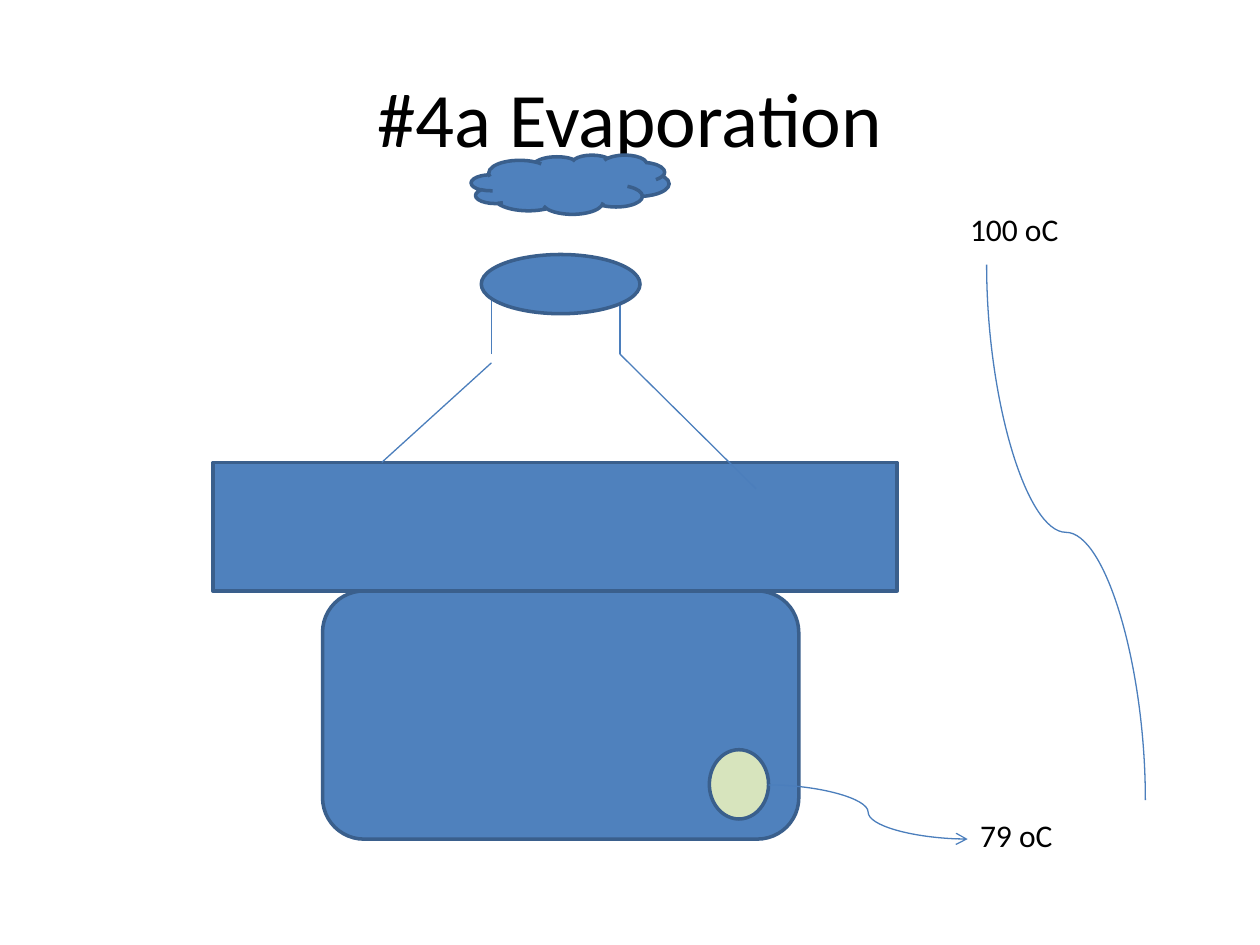
from lxml import etree
from pptx import Presentation
from pptx.dml.color import RGBColor
from pptx.enum.shapes import MSO_CONNECTOR, MSO_SHAPE
from pptx.enum.text import MSO_ANCHOR, MSO_AUTO_SIZE, PP_ALIGN
from pptx.oxml.ns import qn
from pptx.util import Inches, Pt

STRAIGHT, CURVE = MSO_CONNECTOR.STRAIGHT, MSO_CONNECTOR.CURVE
OVAL = MSO_SHAPE.OVAL
COLORS = {"body": "4F81BD", "edge": "3A5F8C", "line": "4B7EBC",
          "bulb": "D7E4BD", "text": "000000"}
FONT = "Calibri"
WIDTH, HEIGHT = 10, 7.5

TITLE = "#4a Evaporation"
BURNER = [
    (MSO_SHAPE.ROUNDED_RECTANGLE, (2.56, 4.69, 3.78, 1.97), "body"),
    (MSO_SHAPE.RECTANGLE, (1.69, 3.67, 5.43, 1.02), "body"),
]
NECK_LEFT, NECK_RIGHT, NECK_TOP, NECK_BOTTOM = 3.9, 4.92, 2.33, 2.81
FLASK_WALLS = [
    ((3.03, 3.67), (NECK_LEFT, 2.88)),
    ((NECK_LEFT, NECK_BOTTOM), (NECK_LEFT, NECK_TOP)),
    ((NECK_RIGHT, NECK_BOTTOM), (6, 3.88)),
    ((NECK_RIGHT, NECK_BOTTOM), (NECK_RIGHT, NECK_TOP)),
]
VAPOUR_AND_BULB = [
    (OVAL, (3.82, 2.02, 1.26, 0.47), "body"),
    (MSO_SHAPE.CLOUD, (3.74, 1.23, 1.57, 0.47), "body"),
    (OVAL, (5.63, 5.95, 0.47, 0.55), "bulb"),
]
BULB_POINTER = ((6.1, 6.23), (7.68, 6.66))
SCALE_CURVE = ((9.09, 6.35), (7.83, 2.1))
READINGS = [("79 oC", (7.68, 6.43, 1.73, 0.4)),
            ("100 oC", (7.6, 1.62, 1.18, 0.4))]


def color(key):
    return RGBColor.from_string(COLORS[key])


def write(frame, text, size):
    run = frame.paragraphs[0].add_run()
    run.text = text
    run.font.name, run.font.size = FONT, Pt(size)
    run.font.color.rgb = color("text")


def add_part(slide, kind, box, fill):
    part = slide.shapes.add_shape(kind, *map(Inches, box))
    part.shadow.inherit = False
    part.fill.solid()
    part.fill.fore_color.rgb = color(fill)
    part.line.color.rgb = color("edge")
    part.line.width = Pt(2)


def add_line(slide, kind, start, end):
    line = slide.shapes.add_connector(kind, *map(Inches, start + end))
    line.line.color.rgb = color("line")
    line.line.width = Pt(0.75)
    etree.SubElement(line._element.spPr, qn("a:effectLst"))
    return line


def add_upright_curve(slide, start, end):
    (x1, y1), (x2, y2) = start, end
    center_x, center_y = (x1 + x2) / 2, (y1 + y2) / 2
    half_length, half_sway = (y1 - y2) / 2, (x1 - x2) / 2
    curve = add_line(slide, CURVE,
                     (center_x - half_length, center_y + half_sway),
                     (center_x + half_length, center_y - half_sway))
    curve._element.spPr.find(qn("a:xfrm")).set("rot", str(270 * 60000))


def main():
    prs = Presentation()
    prs.slide_width, prs.slide_height = Inches(WIDTH), Inches(HEIGHT)
    slide = prs.slides.add_slide(prs.slide_layouts[5])

    title = slide.shapes.title
    title.left, title.top = Inches(WIDTH * 0.05), Inches(HEIGHT * 0.04)
    title.width, title.height = Inches(WIDTH * 0.9), Inches(HEIGHT / 6)
    title.text_frame.vertical_anchor = MSO_ANCHOR.MIDDLE
    title.text_frame.paragraphs[0].alignment = PP_ALIGN.CENTER
    write(title.text_frame, TITLE, 44)

    for part in BURNER:
        add_part(slide, *part)
    for wall in FLASK_WALLS:
        add_line(slide, STRAIGHT, *wall)
    for part in VAPOUR_AND_BULB:
        add_part(slide, *part)

    pointer = add_line(slide, CURVE, *BULB_POINTER)
    outline = pointer._element.spPr.find(qn("a:ln"))
    etree.SubElement(outline, qn("a:tailEnd"), type="arrow")
    add_upright_curve(slide, *SCALE_CURVE)

    for text, box in READINGS:
        reading = slide.shapes.add_textbox(*map(Inches, box)).text_frame
        reading.word_wrap = True
        reading.auto_size = MSO_AUTO_SIZE.SHAPE_TO_FIT_TEXT
        write(reading, text, 18)

    prs.save("out.pptx")


if __name__ == "__main__":
    main()
